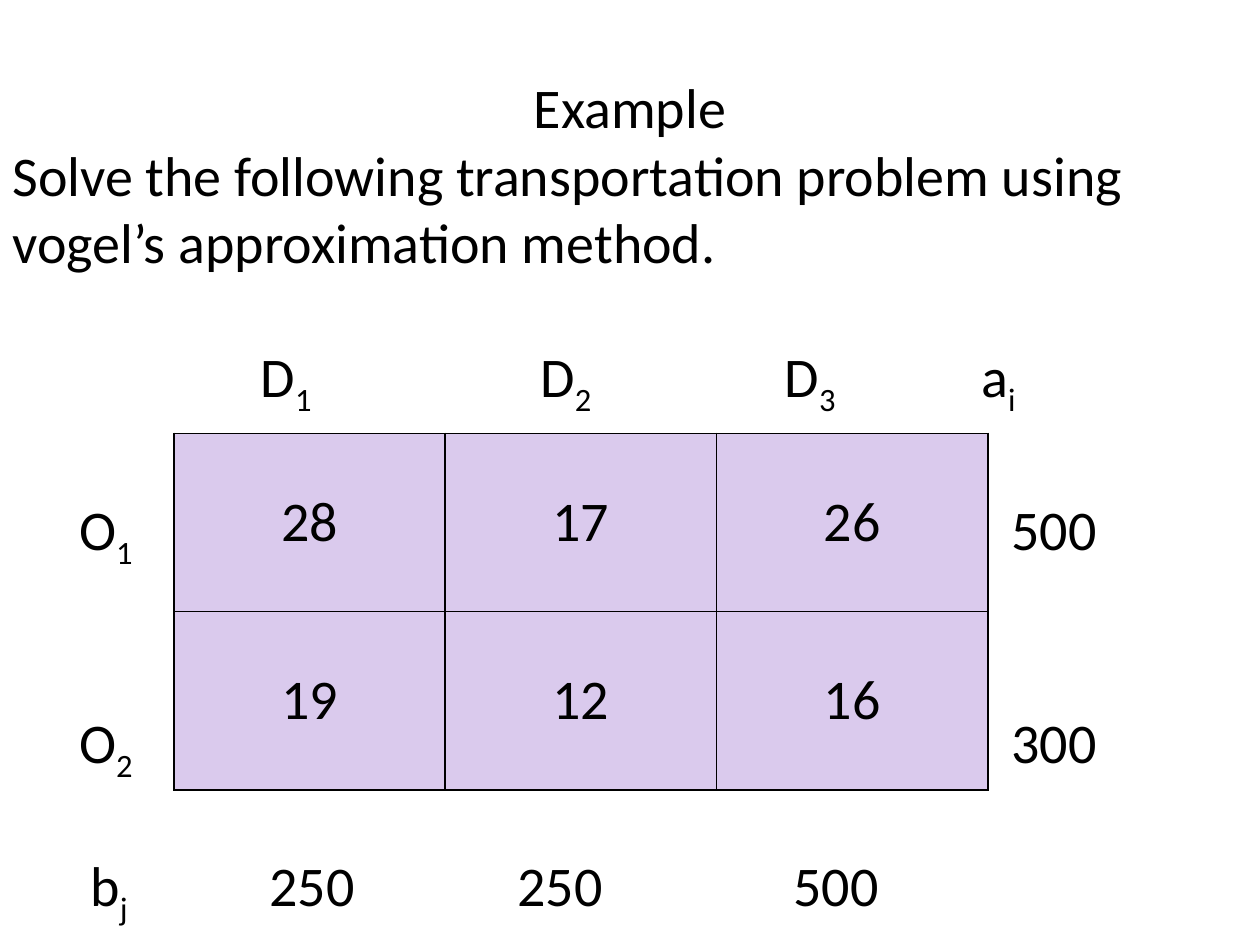
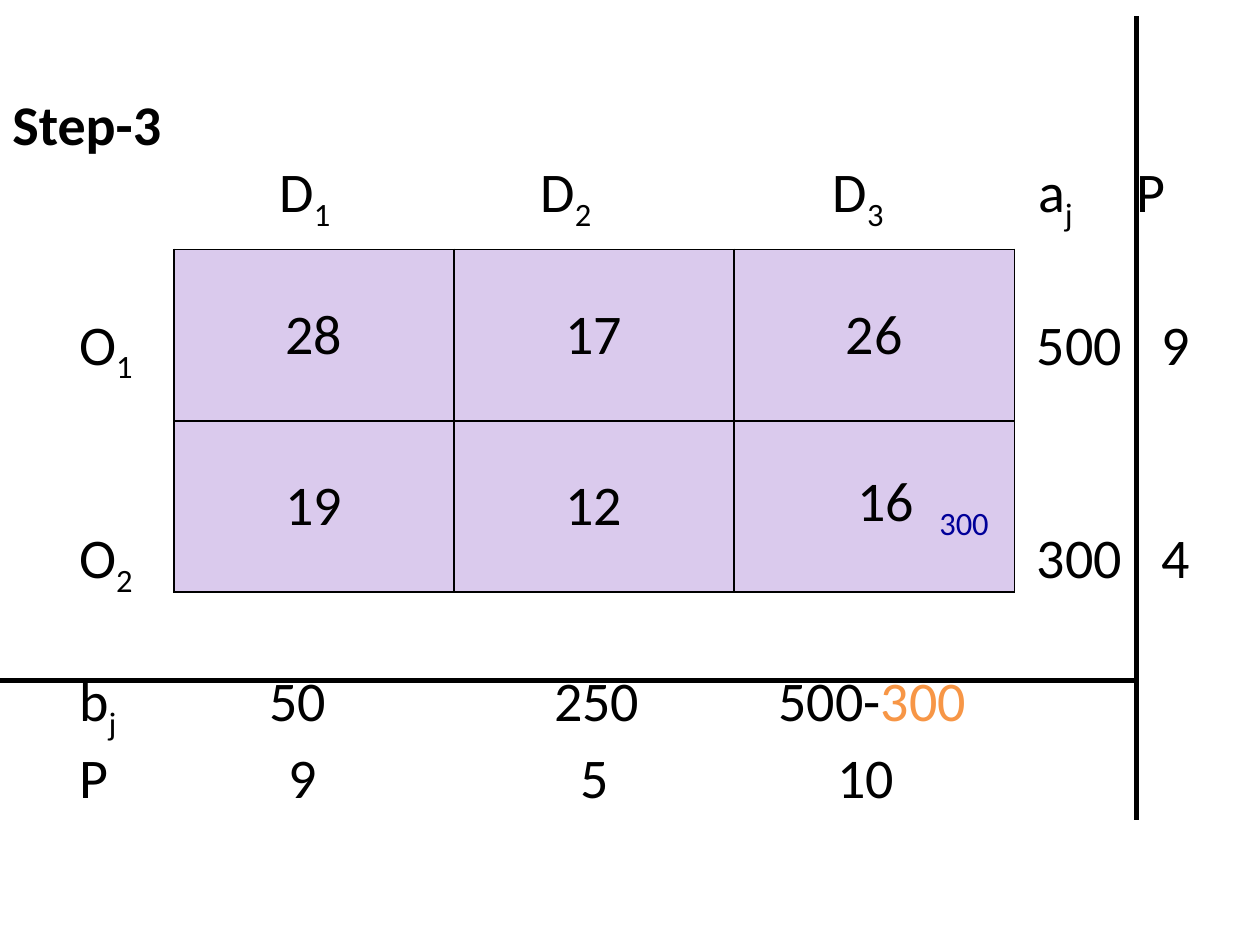
from dataclasses import dataclass

from lxml.etree import SubElement
from pptx import Presentation
from pptx.dml.color import RGBColor
from pptx.enum.shapes import MSO_CONNECTOR
from pptx.enum.text import MSO_ANCHOR, PP_ALIGN
from pptx.oxml.ns import qn
from pptx.util import Inches, Pt


@dataclass(frozen=True)
class Theme:
    """Fonts, type sizes, line widths and colours of the deck."""
    font: str = "Calibri"
    size: int = 32
    line_step: float = 38.4
    border: int = 1
    rule: int = 3
    ink: str = "000000"
    cell: str = "DACAED"
    paper: str = "FFFFFF"
    remainder: str = "F79646"
    allocation: str = "000099"


class Board:
    """Draws on the current slide, on a grid of 100 columns by 75 rows."""

    def __init__(self, theme):
        """Start an empty deck of 10 by 7.5 inches."""
        self.theme = theme
        self.deck = Presentation()
        self.deck.slide_width, self.deck.slide_height = Inches(10), Inches(7.5)
        self.column = self.deck.slide_width / 100
        self.row = self.deck.slide_height / 75
        self.page = None

    def new_page(self):
        """Add a blank slide and make it current."""
        self.page = self.deck.slides.add_slide(self.deck.slide_layouts[6])
        fill = self.page.background.fill
        fill.solid()
        fill.fore_color.rgb = RGBColor.from_string(self.theme.paper)

    def place(self, *pairs):
        """Turn alternating columns and rows into lengths."""
        return [int(value * (self.row if index % 2 else self.column))
                for index, value in enumerate(pairs)]

    def text_box(self, left, top, width, height):
        """Add a wrapping text box and return its frame."""
        box = self.page.shapes.add_textbox(*self.place(left, top, width, height))
        box.text_frame.word_wrap = True
        return box.text_frame

    def tabs(self, para, stops):
        """Set left tab stops, given in columns from the text edge."""
        tab_list = SubElement(para._p.get_or_add_pPr(), qn("a:tabLst"))
        for stop in stops:
            SubElement(tab_list, qn("a:tab"), pos=str(int(stop * self.column)), algn="l")

    def span(self, para, text, colour=None, subscript=False):
        """Append a styled run to a paragraph."""
        span = para.add_run()
        span.text = text
        span.font.name = self.theme.font
        span.font.size = Pt(self.theme.size)
        span.font.color.rgb = RGBColor.from_string(colour or self.theme.ink)
        if subscript:
            span.font._element.set("baseline", "-25000")
        return span

    def line(self, frame, *pieces, stops=(), gap=0):
        """Add a paragraph whose pieces alternate between normal and subscript."""
        first = frame.paragraphs[0]
        para = frame.add_paragraph() if first.runs else first
        if stops:
            self.tabs(para, [stop - 1 for stop in stops])
        if gap:
            para.space_before = Pt(round(gap * self.theme.line_step, 1))
        for index, piece in enumerate(pieces):
            self.span(para, piece, subscript=index % 2 == 1)
        return para

    def outline(self, cell):
        """Draw all four borders of a table cell."""
        properties = cell._tc.get_or_add_tcPr()
        for side in ("lnL", "lnR", "lnT", "lnB"):
            border = SubElement(properties, qn(f"a:{side}"), w=str(Pt(self.theme.border)))
            fill = SubElement(border, qn("a:solidFill"))
            SubElement(fill, qn("a:srgbClr"), val=self.theme.ink)

    def cost_table(self, costs, left, top, width, height):
        """Add the grid of transport costs and return its table."""
        frame = self.page.shapes.add_table(
            len(costs), len(costs[0]), *self.place(left, top, width, height))
        table = frame.table
        table.first_row = table.horz_banding = False
        for row_index, row in enumerate(costs):
            for column_index, cost in enumerate(row):
                cell = table.cell(row_index, column_index)
                self.outline(cell)
                cell.fill.solid()
                cell.fill.fore_color.rgb = RGBColor.from_string(self.theme.cell)
                cell.vertical_anchor = MSO_ANCHOR.MIDDLE
                para = cell.text_frame.paragraphs[0]
                para.alignment = PP_ALIGN.CENTER
                self.span(para, str(cost))
        return table

    def allocate(self, cell, cost, amount):
        """Show an allocated amount beside the cost in a cell."""
        para = cell.text_frame.paragraphs[0]
        para.text = ""
        para.alignment = PP_ALIGN.LEFT
        self.tabs(para, (8.8, 15.3))
        self.span(para, f"\t{cost}")
        self.span(para, f"\t{amount}", self.theme.allocation, subscript=True)

    def rule(self, *ends):
        """Draw a heavy straight line between two grid points."""
        rule = self.page.shapes.add_connector(MSO_CONNECTOR.STRAIGHT, *self.place(*ends))
        rule.line.width = Pt(self.theme.rule)
        rule.line.color.rgb = RGBColor.from_string(self.theme.ink)
        SubElement(rule._element.spPr, qn("a:effectLst"))


COSTS = ((28, 17, 26), (19, 12, 16))
HEADINGS = ("\tD", "1", "\tD", "2", "\tD", "3", "\ta")


def source_rows(board, frame, tails, stops):
    """Write the two origin lines with their supplies."""
    for number, (tail, gap) in enumerate(zip(tails, (1.13, 2.03)), 1):
        board.line(frame, "\tO", str(number), tail, stops=stops, gap=gap)


def example_page(board):
    """Build the problem statement."""
    board.new_page()
    frame = board.text_box(0, 5.3, 100, 65.7)
    board.line(frame, "Example").alignment = PP_ALIGN.CENTER
    board.line(frame, "Solve the following transportation problem "
                      "using vogel’s approximation method.")
    board.line(frame, *HEADINGS, "i", stops=(20.7, 42.9, 62.3, 77.9), gap=1)
    source_rows(board, frame, ("\t500", "\t300"), (6.3, 80.3))
    board.line(frame, "\tb", "j", "\t250\t250\t500",
               stops=(7.2, 21.4, 41.1, 63), gap=1)
    board.cost_table(COSTS, 13.8, 34.4, 64.6, 28.3)


def step_page(board):
    """Build the third step with penalties and one allocation."""
    board.new_page()
    frame = board.text_box(0, 6.6, 100, 58.5)
    board.line(frame, "Step-3").runs[0].font.bold = True
    board.line(frame, *HEADINGS, "j", "\tP", stops=(22.2, 42.9, 66.1, 82.4, 90.2))
    source_rows(board, frame, ("\t500\t9", "\t300\t4"), (6.3, 82.3, 92.2))
    demand = board.line(frame, "\tb", "j", "\t50\t250\t500-",
                        stops=(6.3, 21.4, 44, 61.8), gap=1)
    board.span(demand, "300", board.theme.remainder)
    board.line(frame, "\tP\t9\t5\t10", stops=(6.3, 22.9, 46.1, 66.5))
    table = board.cost_table(COSTS, 13.8, 19.8, 66.7, 27.2)
    board.allocate(table.cell(1, 2), COSTS[1][2], 300)
    board.rule(90.2, 1.3, 90.2, 65.1)
    board.rule(0, 54, 90.2, 54)


def main():
    """Build and save the deck."""
    board = Board(Theme())
    example_page(board)
    step_page(board)
    board.deck.save("out.pptx")


if __name__ == "__main__":
    main()
